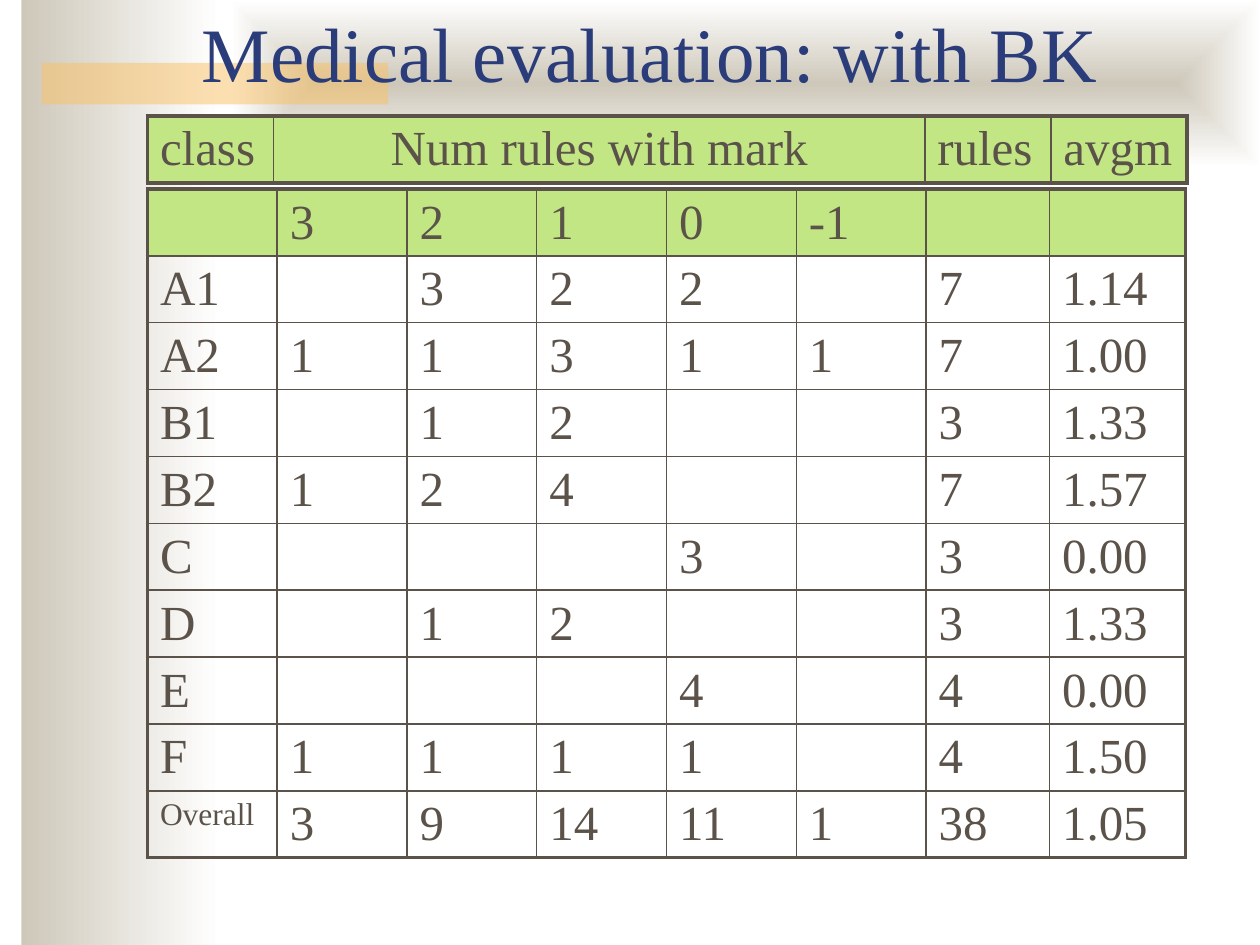
import dataclasses

import pptx
import pptx.dml.color
import pptx.enum.shapes
import pptx.enum.text
import pptx.oxml
import pptx.oxml.ns
import pptx.util
from pptx.util import Inches


@dataclasses.dataclass(frozen=True)
class Theme:
    font: str = "Times New Roman"
    title_color: str = "2A3D7A"
    ink: str = "5B5249"
    header_fill: str = "C3E684"
    sand: str = "CEC8BA"
    white: str = "FFFFFF"
    accent: str = "FAC164"
    title_size: float = 44
    cell_size: float = 28
    small_size: float = 18
    thin: float = 1
    thick: float = 2.25


THEME = Theme()
ROW_HEIGHT = 0.53

HEADING = [["class", "Num rules with mark", "rules", "avgm"]]
HEADING_WIDTHS = [1, 5.17, 1, 1.08]

MARKS = [
    ["", "3", "2", "1", "0", "-1", "", ""],
    ["A1", "", "3", "2", "2", "", "7", "1.14"],
    ["A2", "1", "1", "3", "1", "1", "7", "1.00"],
    ["B1", "", "1", "2", "", "", "3", "1.33"],
    ["B2", "1", "2", "4", "", "", "7", "1.57"],
    ["C", "", "", "", "3", "", "3", "0.00"],
    ["D", "", "1", "2", "", "", "3", "1.33"],
    ["E", "", "", "", "4", "", "4", "0.00"],
    ["F", "1", "1", "1", "1", "", "4", "1.50"],
    ["Overall", "3", "9", "14", "11", "1", "38", "1.05"],
]
MARKS_WIDTHS = [1.03] * 6 + [0.98, 1.08]


def rgb(color):
    return pptx.dml.color.RGBColor.from_string(color)


def xml(text):
    namespace = pptx.oxml.ns.nsdecls("a")
    return pptx.oxml.parse_xml(text.replace("NS", namespace, 1))


def format_font(font, size, color):
    for name, value in {"name": THEME.font, "size": pptx.util.Pt(size), "bold": False}.items():
        setattr(font, name, value)
    font.color.rgb = rgb(color)


def add_panel(slide, box):
    """Plain rectangle without outline or shadow."""
    rectangle = pptx.enum.shapes.MSO_SHAPE.RECTANGLE
    shape = slide.shapes.add_shape(rectangle, *map(Inches, box))
    shape.shadow.inherit = False
    shape.line.fill.background()
    return shape


def add_gradient_panel(slide, box):
    shape = add_panel(slide, box)
    shape.fill.gradient()
    shape.fill.gradient_angle = 0
    for stop, color in zip(shape.fill.gradient_stops, (THEME.sand, THEME.white)):
        stop.color.rgb = rgb(color)
    return shape


def add_backdrop(slide, box):
    left, top, width, height = box
    # Side band fading to the right
    add_gradient_panel(slide, (left + 0.17, top, 1.58, height))

    # Top band fading outward from its centre
    top_band = add_gradient_panel(slide, (left + 1.83, top, width - 1.83, 1.33))
    linear = top_band.element.find(".//" + pptx.oxml.ns.qn("a:lin"))
    linear.getparent().replace(linear, xml(
        '<a:path NS path="shape">'
        '<a:fillToRect l="50000" t="50000" r="50000" b="50000"/></a:path>'))

    # Half-transparent accent bar
    bar = add_panel(slide, (left + 0.33, top + 0.5, 2.75, 0.33))
    bar.fill.solid()
    bar.fill.fore_color.rgb = rgb(THEME.accent)
    color = bar.element.find(".//" + pptx.oxml.ns.qn("a:srgbClr"))
    color.append(xml('<a:alpha NS val="50000"/>'))


def place_title(slide, box, text):
    title = slide.shapes.title
    for name, value in zip(("left", "top", "width", "height"), box):
        setattr(title, name, Inches(value))
    # Bring the title in front of the backdrop
    title.element.getparent().append(title.element)
    frame = title.text_frame
    settings = {
        "text": text,
        "word_wrap": True,
        "auto_size": pptx.enum.text.MSO_AUTO_SIZE.NONE,
        "vertical_anchor": pptx.enum.text.MSO_ANCHOR.BOTTOM,
    }
    for name, value in settings.items():
        setattr(frame, name, value)
    paragraph = frame.paragraphs[0]
    paragraph.alignment = pptx.enum.text.PP_ALIGN.LEFT
    format_font(paragraph.runs[0].font, THEME.title_size, THEME.title_color)


def set_borders(cell, widths):
    properties = cell._tc.get_or_add_tcPr()
    for position, (side, width) in enumerate(widths.items()):
        properties.insert(position, xml(
            f'<a:{side} NS w="{pptx.util.Pt(width)}"><a:solidFill>'
            f'<a:srgbClr val="{THEME.ink}"/></a:solidFill></a:{side}>'))


def fill_cell(cell, text, is_header):
    if is_header:
        cell.fill.solid()
        cell.fill.fore_color.rgb = rgb(THEME.header_fill)
    else:
        cell.fill.background()
    cell.text = text
    size = THEME.small_size if text == "Overall" else THEME.cell_size
    format_font(cell.text_frame.paragraphs[0].font, size, THEME.ink)


def add_framed_table(slide, left, top, widths, rows):
    """Table with a thick frame, thin inner rules and a filled first row."""
    row_count, column_count = len(rows), len(widths)
    box = (left, top, sum(widths), ROW_HEIGHT * row_count)
    table = slide.shapes.add_table(row_count, column_count, *map(Inches, box)).table
    table.first_row = table.horz_banding = False
    for column, width in zip(table.columns, widths):
        column.width = Inches(width)
    for row_index, values in enumerate(rows):
        table.rows[row_index].height = Inches(ROW_HEIGHT)
        for column_index, text in enumerate(values):
            cell = table.cell(row_index, column_index)
            fill_cell(cell, text, row_index == 0)
            on_frame = {
                "lnL": column_index == 0,
                "lnR": column_index == column_count - 1,
                "lnT": row_index == 0,
                "lnB": row_index == row_count - 1,
            }
            set_borders(cell, {side: THEME.thick if outer else THEME.thin
                               for side, outer in on_frame.items()})
    return table


def add_evaluation(slide, box):
    left, top = box[:2]
    heading = add_framed_table(slide, left, top, HEADING_WIDTHS, HEADING)
    marks_label = heading.cell(0, 1).text_frame.paragraphs[0]
    marks_label.alignment = pptx.enum.text.PP_ALIGN.CENTER
    add_framed_table(slide, left, top + 0.58, MARKS_WIDTHS, MARKS)


def main():
    presentation = pptx.Presentation()
    presentation.slide_width = Inches(10)
    presentation.slide_height = Inches(7.5)
    slide = presentation.slides.add_slide(presentation.slide_layouts[5])
    add_backdrop(slide, (0, 0, 10, 7.5))
    place_title(slide, (1.5, -0.42, 8.5, 1.25), "Medical evaluation: with BK")
    add_evaluation(slide, (1.17, 0.92, 8.25, 5.88))
    presentation.save("out.pptx")


if __name__ == "__main__":
    main()
